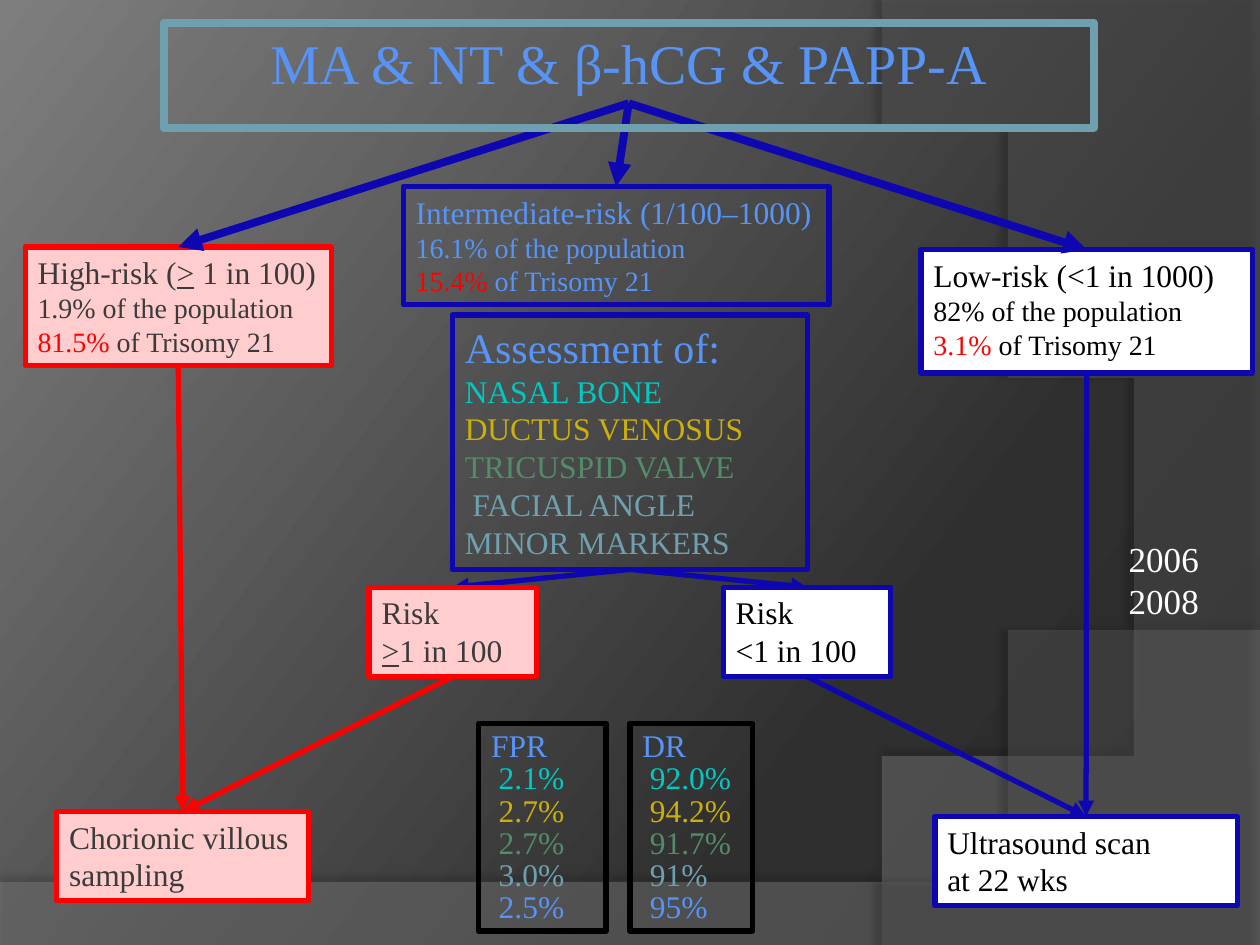
from lxml.etree import SubElement
from pptx import Presentation
from pptx.dml.color import RGBColor
from pptx.enum.shapes import MSO_CONNECTOR as CONN, MSO_SHAPE as SHAPE
from pptx.enum.text import MSO_ANCHOR as ANCHOR, MSO_AUTO_SIZE as FIT, PP_ALIGN as ALIGN
from pptx.oxml import parse_xml
from pptx.oxml.ns import qn
from pptx.util import Inches, Pt

FONT = "Times New Roman"
RED, NAVY, PINK, WHITE, BLACK = "FF0000", "0E06B0", "FFCDCD", "FFFFFF", "000000"
GREY, BLUE, TEAL, GOLD, GREEN, STEEL = "3B3B3B", "5694F8", "00C8C3", "CCAF0A", "528C68", "6EA0B0"
TOP, BOTTOM = 0, 2
SPACE = 0.06  # inches, small indent of the listed values

TITLE = "MA & NT & β-hCG & PAPP-A"
TITLE_BOX = (1.3, 0.18, 7.38, 0.64)


def para(*runs, size=18, indent=0, spacing=None):
    """A paragraph; each run is (text, colour) or (text, colour, underlined)."""
    return dict(runs=runs, size=size, indent=indent, spacing=spacing)


def risk_group(heading, share, detected, color):
    return [para(*heading), para((share + " of the population", color), size=16),
            para((detected, RED), (" of Trisomy 21", color), size=16)]


def rate_list(heading, values):
    colors = (TEAL, GOLD, GREEN, STEEL, BLUE)
    return [para((heading, BLUE), spacing=0.85)] + [
        para((v, c), indent=SPACE, spacing=0.85) for v, c in zip(values, colors)]


# Boxes: name -> (left, top, width, height), fill, line, paragraphs, text options
BOXES = {
    "sampling": ((0.45, 6.44, 2, 0.71), PINK, RED,
                 [para(("Chorionic villous sampling", GREY))], {}),
    "high": ((0.2, 1.96, 2.43, 0.94), PINK, RED,
             risk_group([("High-risk (", GREY), (">", GREY, True), (" 1 in 100)", GREY)],
                        "1.9%", "81.5%", GREY), dict(wrap=False)),
    "scan": ((7.42, 6.48, 2.4, 0.71), WHITE, NAVY,
             [para(("Ultrasound scan", BLACK)), para(("at 22 wks", BLACK))], {}),
    "low": ((7.31, 1.98, 2.63, 0.98), WHITE, NAVY,
            risk_group([("Low-risk (<1 in 1000)", BLACK)], "82%", "3.1%", BLACK), {}),
    "middle": ((3.2, 1.48, 3.38, 0.94), None, NAVY,
               risk_group([("Intermediate-risk (1/100–1000)", BLUE)],
                          "16.1%", "15.4%", BLUE), dict(wrap=False)),
    "risk_high": ((2.93, 4.66, 1.33, 0.71), PINK, RED,
                  [para(("Risk", GREY)), para((">", GREY, True), ("1 in 100", GREY))], {}),
    "risk_low": ((5.74, 4.66, 1.33, 0.71), WHITE, NAVY,
                 [para(("Risk", BLACK)), para(("<1 in 100", BLACK))], {}),
    "assessment": ((3.59, 2.5, 2.82, 2.02), None, NAVY,
                   [para(("Assessment of:", BLUE), size=24),
                    para(("NASAL BONE", TEAL)), para(("DUCTUS VENOSUS", GOLD)),
                    para(("TRICUSPID VALVE", GREEN)),
                    para(("FACIAL ANGLE", STEEL), indent=SPACE),
                    para(("MINOR MARKERS", STEEL))], {}),
    "dr": ((5, 5.74, 0.97, 1.65), None, BLACK,
           rate_list("DR", ["92.0%", "94.2%", "91.7%", "91%", "95%"]), dict(anchor=ANCHOR.BOTTOM)),
    "fpr": ((3.8, 5.74, 1.01, 1.65), None, BLACK,
            rate_list("FPR", ["2.1%", "2.7%", "2.7%", "3.0%", "2.5%"]), dict(anchor=ANCHOR.BOTTOM)),
}
YEARS = ((8.86, 4.22, 0.76, 0.77), [para((y, WHITE), size=20) for y in ("2006", "2008")])

# Arrows from the bottom of one box to the top of another
ARROWS = [
    ("high", "sampling", RED, 3), ("low", "scan", NAVY, 3),
    ("assessment", "risk_high", NAVY, 3), ("assessment", "risk_low", NAVY, 3),
    ("risk_low", "scan", NAVY, 3), ("risk_high", "sampling", RED, 3),
    ("title", "high", NAVY, 4.5), ("title", "low", NAVY, 4.5), ("title", "middle", NAVY, 4.5),
]

# Background swooshes: start, curve (three control points), corners, colour, alpha,
# shadow (alpha, distance in points, direction)
SWOOSHES = [
    ((10, 5.2), [(5.59, 7.29), (3.91, 7.19), (0, 7.05)], [(0, 7.5), (10, 7.5)],
     "7F7F7F", 45, (35, 3.5, 270)),
    ((7.03, 7.5), [(8.91, 6.19), (9.47, 2.75), (6.68, 0)], [(10, 0.02), (10, 7.5)],
     "5E5E5E", 40, (45, 4, 180)),
]
GRADIENT = [(0, "282828"), (30, "2F2F2F"), (100, "7E7E7E")]
NS = 'xmlns:a="http://schemas.openxmlformats.org/drawingml/2006/main"'


def rgb(color):
    return RGBColor.from_string(color)


def inches(box):
    return [Inches(v) for v in box]


def add_text(tf, paras, wrap=True, anchor=ANCHOR.TOP, align=ALIGN.LEFT):
    tf.word_wrap, tf.vertical_anchor, tf.auto_size = wrap, anchor, FIT.SHAPE_TO_FIT_TEXT
    for i, item in enumerate(paras):
        p = tf.add_paragraph() if i else tf.paragraphs[0]
        p.alignment = align
        if item["spacing"]:
            p.line_spacing = item["spacing"]
        if item["indent"]:
            p._p.get_or_add_pPr().set("marL", str(Inches(item["indent"])))
        for text, color, *underline in item["runs"]:
            r = p.add_run()
            r.text = text
            r.font.name, r.font.size = FONT, Pt(item["size"])
            r.font.color.rgb = rgb(color)
            if underline:
                r.font.underline = True


def style(sp, fill, line, width):
    if fill:
        sp.fill.solid()
        sp.fill.fore_color.rgb = rgb(fill)
    else:
        sp.fill.background()
    sp.line.color.rgb = rgb(line)
    sp.line.width = Pt(width)


def add_swoosh(s, start, curve, corners, color, alpha, shadow):
    controls, steps = [start, *curve], 40
    points = []
    for i in range(1, steps + 1):
        t = i / steps
        weights = ((1 - t) ** 3, 3 * t * (1 - t) ** 2, 3 * t * t * (1 - t), t ** 3)
        points.append(tuple(sum(w * c[k] for w, c in zip(weights, controls)) for k in (0, 1)))
    fb = s.shapes.build_freeform(*start, scale=Inches(1))
    fb.add_line_segments(points + corners)
    sp = fb.convert_to_shape()
    sp.fill.solid()
    sp.fill.fore_color.rgb = rgb(color)
    sp.line.fill.background()
    clr = sp._element.spPr.find(qn("a:solidFill"))[0]
    SubElement(clr, qn("a:alpha")).set("val", str(alpha * 1000))
    opacity, dist, angle = shadow
    sp._element.spPr.append(parse_xml(
        f'<a:effectLst {NS}><a:outerShdw blurRad="{Pt(4)}" dist="{Pt(dist)}" dir="{angle * 60000}">'
        f'<a:srgbClr val="000000"><a:alpha val="{opacity * 1000}"/></a:srgbClr>'
        '</a:outerShdw></a:effectLst>'))


def add_arrow(s, start, end, color, width):
    c = s.shapes.add_connector(CONN.STRAIGHT, 0, 0, 0, 0)
    c.begin_connect(start, BOTTOM)
    c.end_connect(end, TOP)
    c.line.color.rgb = rgb(color)
    c.line.width = Pt(width)
    SubElement(c.line._get_or_add_ln(), qn("a:tailEnd")).set("type", "triangle")
    SubElement(c._element.spPr, qn("a:effectLst"))
    return c


def main():
    prs = Presentation()
    prs.slide_width, prs.slide_height = Inches(10), Inches(7.5)
    s = prs.slides.add_slide(prs.slide_layouts[5])

    # Background
    bg = s.background.fill
    bg.solid()
    stops = "".join(f'<a:gs pos="{pos * 1000}"><a:srgbClr val="{c}"/></a:gs>' for pos, c in GRADIENT)
    solid = s._element.cSld.find(".//" + qn("a:solidFill"))
    solid.getparent().replace(solid, parse_xml(
        f'<a:gradFill {NS} rotWithShape="1"><a:gsLst>{stops}</a:gsLst>'
        f'<a:lin ang="{217 * 60000}" scaled="0"/></a:gradFill>'))
    for swoosh in SWOOSHES:
        add_swoosh(s, *swoosh)

    # Title
    title = s.shapes.title
    title.left, title.top, title.width, title.height = inches(TITLE_BOX)
    style(title, None, STEEL, 4.5)
    add_text(title.text_frame, [para((TITLE, BLUE), size=32)], align=ALIGN.CENTER)

    # Boxes
    shapes = {"title": title}
    for name, (box, fill, line, paras, options) in BOXES.items():
        sp = shapes[name] = s.shapes.add_shape(SHAPE.RECTANGLE, *inches(box))
        sp.shadow.inherit = False
        style(sp, fill, line, 3)
        add_text(sp.text_frame, paras, **options)
    box, paras = YEARS
    add_text(s.shapes.add_textbox(*inches(box)).text_frame, paras, wrap=False)

    # Arrows: those between boxes lie behind them, those from the title in front
    for start, end, color, width in ARROWS:
        c = add_arrow(s, shapes[start], shapes[end], color, width)
        if start != "title":
            shapes["sampling"]._element.addprevious(c._element)
    s.shapes[-1]._element.addnext(title._element)

    prs.save("out.pptx")


if __name__ == "__main__":
    main()
